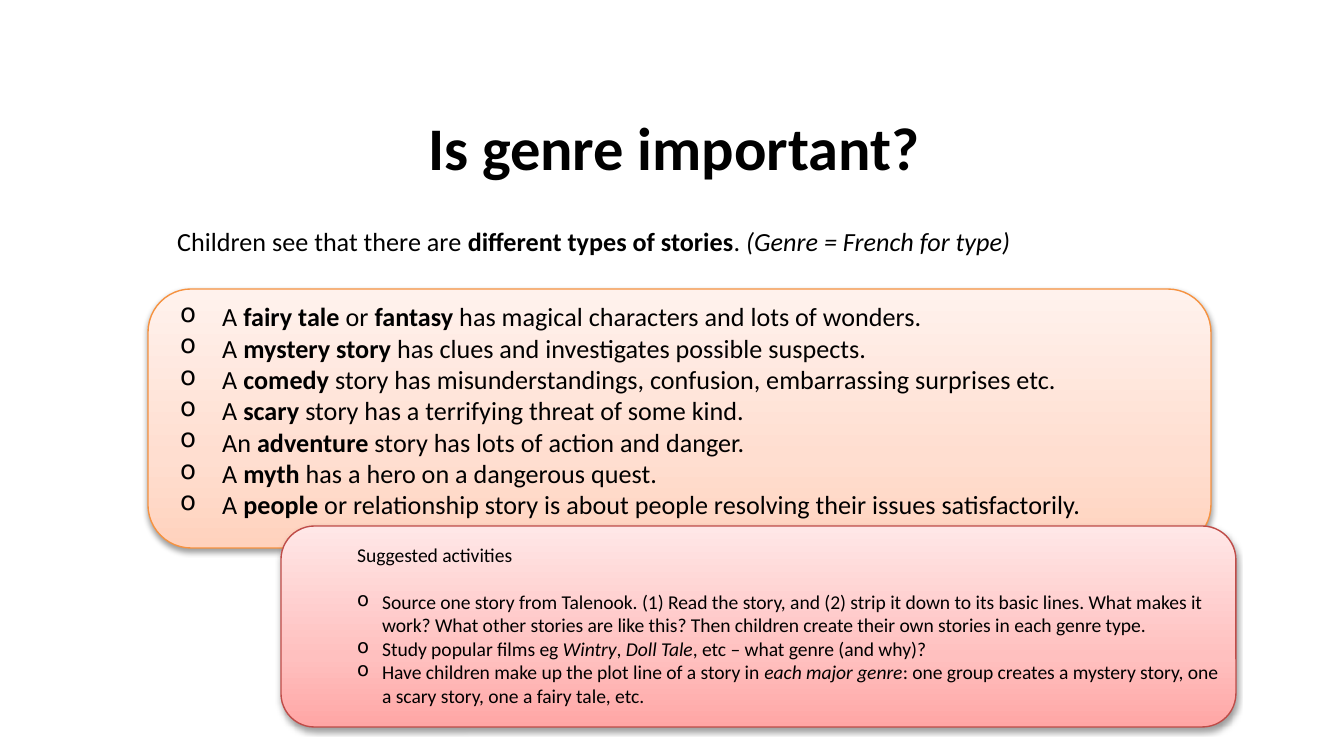
import pptx
import pptx.dml.color
import pptx.enum.shapes
import pptx.enum.text
import pptx.oxml
import pptx.oxml.ns
import pptx.util

EMU_PER_PX = 914400 / 134.4
BLACK = pptx.dml.color.RGBColor(0x00, 0x00, 0x00)
ORANGE_LINE = pptx.dml.color.RGBColor(0xF6, 0x92, 0x40)
ORANGE_STOPS = [
    (0, pptx.dml.color.RGBColor(0xFF, 0xD2, 0xBD)),
    (0.35, pptx.dml.color.RGBColor(0xFF, 0xDE, 0xD0)),
    (1, pptx.dml.color.RGBColor(0xFF, 0xF2, 0xED)),
]
RED_LINE = pptx.dml.color.RGBColor(0xBF, 0x4C, 0x48)
RED_STOPS = [
    (0, pptx.dml.color.RGBColor(0xFF, 0xA6, 0xA5)),
    (0.35, pptx.dml.color.RGBColor(0xFF, 0xC0, 0xBF)),
    (1, pptx.dml.color.RGBColor(0xFF, 0xE7, 0xE7)),
]
PLAIN, BOLD, ITALIC = "plain", "bold", "italic"
SHADOW = (
    '<a:outerShdw %s blurRad="39400" dist="20300" dir="5400000" rotWithShape="0">'
    '<a:srgbClr val="000000"><a:alpha val="38000"/></a:srgbClr></a:outerShdw>'
    % pptx.oxml.ns.nsdecls("a")
)
BULLET = '<a:buChar %s char="o"/>' % pptx.oxml.ns.nsdecls("a")


def px(length):
    return pptx.util.Emu(round(length * EMU_PER_PX))


class SlideBuilder:
    font_name = "Calibri"
    text_color = BLACK

    def __init__(self, slide):
        self.slide = slide

    def panel(self, left, top, width, height, stops, line_color):
        shape = self.slide.shapes.add_shape(
            pptx.enum.shapes.MSO_SHAPE.ROUNDED_RECTANGLE,
            px(left), px(top), px(width), px(height))
        shape.fill.gradient()
        shape.fill.gradient_angle = 90
        stop_list = shape._element.spPr.find(".//" + pptx.oxml.ns.qn("a:gsLst"))
        stop_list.append(pptx.oxml.parse_xml(
            '<a:gs %s pos="0"><a:srgbClr val="FFFFFF"/></a:gs>' % pptx.oxml.ns.nsdecls("a")))
        for stop, (position, color) in zip(shape.fill.gradient_stops, stops):
            stop.position = position
            stop.color.rgb = color
        shape.line.color.rgb = line_color
        shape.line.width = pptx.util.Pt(0.75)
        shape.shadow.inherit = False
        effects = shape._element.spPr.find(pptx.oxml.ns.qn("a:effectLst"))
        effects.append(pptx.oxml.parse_xml(SHADOW))

    def text_box(self, left, top, width, height):
        box = self.slide.shapes.add_textbox(px(left), px(top), px(width), px(height))
        box.text_frame.word_wrap = True
        return box.text_frame

    def paragraph(self, frame, runs, size, indent=0):
        paragraph = frame.paragraphs[0]
        if paragraph.runs:
            paragraph = frame.add_paragraph()
        if indent:
            properties = paragraph._p.get_or_add_pPr()
            properties.set("marL", str(px(indent)))
            properties.set("indent", str(-px(indent)))
            properties.append(pptx.oxml.parse_xml(BULLET))
        for text, style in runs:
            run = paragraph.add_run()
            run.text = text
            run.font.name = self.font_name
            run.font.size = pptx.util.Pt(size)
            run.font.color.rgb = self.text_color
            run.font.bold = style == BOLD
            run.font.italic = style == ITALIC
        return paragraph


GENRES = [
    [("A ", PLAIN), ("fairy tale", BOLD), (" or ", PLAIN), ("fantasy", BOLD),
     (" has magical characters and lots of wonders.", PLAIN)],
    [("A ", PLAIN), ("mystery story", BOLD),
     (" has clues and investigates possible suspects.", PLAIN)],
    [("A ", PLAIN), ("comedy", BOLD),
     (" story has misunderstandings, confusion, embarrassing surprises etc.", PLAIN)],
    [("A ", PLAIN), ("scary ", BOLD), ("story has a terrifying threat of some kind.", PLAIN)],
    [("An ", PLAIN), ("adventure", BOLD), (" story has lots of action and danger.", PLAIN)],
    [("A ", PLAIN), ("myth", BOLD), (" has a hero on a dangerous quest.", PLAIN)],
    [("A ", PLAIN), ("people", BOLD),
     (" or relationship story is about people resolving their issues satisfactorily.", PLAIN)],
]
ACTIVITIES = [
    [("Source one story from Talenook. (1) Read the story, and (2) strip it down to its "
      "basic lines. What makes it work? What other stories are like this? Then children "
      "create their own stories in each genre type.", PLAIN)],
    [("Study popular films eg ", PLAIN), ("Wintry", ITALIC), (", ", PLAIN),
     ("Doll Tale", ITALIC), (", etc – what genre (and why)?", PLAIN)],
    [("Have children make up the plot line of a story in ", PLAIN),
     ("each major genre", ITALIC),
     (": one group creates a mystery story, one a scary story, one a fairy tale, etc.", PLAIN)],
]


def main():
    presentation = pptx.Presentation()
    presentation.slide_width = px(1344)
    presentation.slide_height = px(756)
    builder = SlideBuilder(presentation.slides.add_slide(presentation.slide_layouts[6]))

    title = builder.text_box(69, 103, 1210, 126)
    heading = builder.paragraph(title, [("Is genre important?", BOLD)], 32.4)
    heading.alignment = pptx.enum.text.PP_ALIGN.CENTER

    builder.panel(148, 289, 1063, 259, ORANGE_STOPS, ORANGE_LINE)
    genres = builder.text_box(167, 294, 950, 233)
    for runs in GENRES:
        builder.paragraph(genres, runs, 14, indent=42)

    introduction = builder.text_box(164, 219, 973, 46)
    builder.paragraph(introduction, [
        ("Children see that there are ", PLAIN), ("different types of stories", BOLD),
        (". ", PLAIN), ("(Genre = French for type)", ITALIC)], 14)

    builder.panel(281, 526, 955, 201, RED_STOPS, RED_LINE)
    activities = builder.text_box(344, 536, 894, 180)
    label = builder.paragraph(activities, [("Suggested activities", PLAIN)], 10.5)
    label.space_after = pptx.util.Pt(12.75)
    for runs in ACTIVITIES:
        builder.paragraph(activities, runs, 10.5, indent=25)

    presentation.save("out.pptx")


if __name__ == "__main__":
    main()
